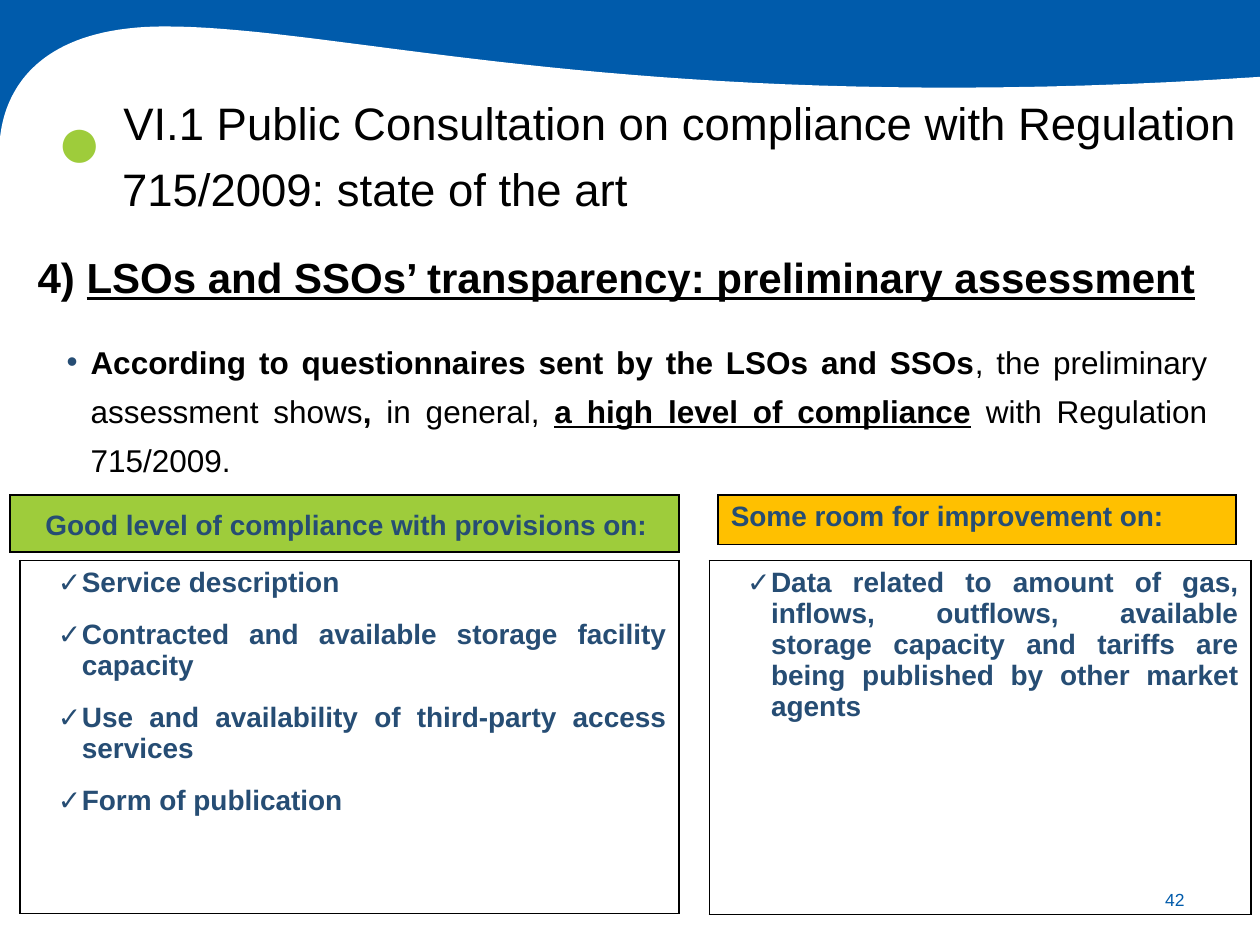
from lxml.etree import SubElement
from pptx import Presentation
from pptx.dml.color import RGBColor
from pptx.enum.shapes import MSO_SHAPE
from pptx.enum.text import MSO_ANCHOR, PP_ALIGN
from pptx.oxml.ns import qn
from pptx.util import Inches, Pt

THEME = {
    "font": "Arial",
    "blue": "005BAB", "green": "9ECC3B", "amber": "FFC000",
    "navy": "264D74", "black": "000000", "white": "FFFFFF",
    "title": 26, "heading": 24, "body": 18, "cell": 16, "number": 10, "dot": 44,
}

TITLE = [[("VI.1 Public Consultation on compliance with Regulation 715/2009: state of the art", "")]]
HEADING = [[("4) ", "b"), ("LSOs and SSOs’ transparency: preliminary assessment", "bu")]]
SUMMARY = [[
    ("According to questionnaires sent by the LSOs and SSOs", "b"),
    (", the preliminary assessment shows", ""),
    (", ", "b"),
    ("in general, ", ""),
    ("a high level of compliance", "bu"),
    (" with Regulation 715/2009.", ""),
]]
GOOD_TITLE = ["Good level of compliance with provisions on:"]
GOOD_ITEMS = [
    "Service description",
    "Contracted and available storage facility capacity",
    "Use and availability of third-party access services",
    "Form of publication",
]
ROOM_TITLE = ["Some room for improvement on:"]
ROOM_ITEMS = [
    "Data related to amount of gas, inflows, outflows, available storage capacity "
    "and tariffs are being published by other market agents",
]

HANGING = {"margin": 0.39, "indent": -0.19}
CHECKED = {**HANGING, "bullet": "✓", "align": PP_ALIGN.JUSTIFY}
PANELS = [
    ((0.08, 3.93, 5.31, 0.45), GOOD_TITLE, "green",
     {"margin": 0.39, "indent": -0.21, "spacing": 1.3}),
    ((0.16, 4.45, 5.23, 2.8), GOOD_ITEMS, None, CHECKED),
    ((5.7, 3.93, 4.11, 0.39), ROOM_TITLE, "amber", {}),
    ((5.63, 4.45, 4.3, 2.81), ROOM_ITEMS, None, CHECKED),
]

WAVE_START = (10, 0.61)
WAVE_CURVES = [
    ((5.1, 0.94), (2.76, 0.21), (1.31, 0.21)),
    ((0.23, 0.21), (0.03, 0.79), (0, 1.1)),
]
WAVE_STEPS = 40


def color(name):
    return RGBColor.from_string(THEME[name])


def write(frame, paragraphs, size, ink, margin=0, indent=0, bullet=None,
          align=PP_ALIGN.LEFT, spacing=1.0, gap=6):
    frame.word_wrap = True
    for index, spans in enumerate(paragraphs):
        para = frame.paragraphs[0] if index == 0 else frame.add_paragraph()
        properties = para._p.get_or_add_pPr()
        properties.set("marL", str(Inches(margin)))
        properties.set("indent", str(Inches(indent)))
        if bullet:
            tint = SubElement(properties, qn("a:buClr"))
            SubElement(tint, qn("a:srgbClr"), val=THEME["navy"])
            SubElement(properties, qn("a:buFont"), typeface=THEME["font"])
            SubElement(properties, qn("a:buChar"), char=bullet)
        para.alignment = align
        para.line_spacing = spacing
        para.space_before = Pt(gap if index else 0)
        para.space_after = Pt(gap)
        for text, style in spans:
            span = para.add_run()
            span.text = text
            span.font.name = THEME["font"]
            span.font.size = Pt(THEME[size])
            span.font.color.rgb = color(ink)
            span.font.bold = "b" in style
            span.font.underline = "u" in style


def add_text(page, place, paragraphs, size, ink, anchor=MSO_ANCHOR.TOP, **layout):
    box = page.shapes.add_textbox(*map(Inches, place))
    box.text_frame.vertical_anchor = anchor
    write(box.text_frame, paragraphs, size, ink, **layout)


def add_panel(page, place, lines, fill, layout):
    table = page.shapes.add_table(1, 1, *map(Inches, place)).table
    table.first_row = False
    table.horz_banding = False
    cell = table.cell(0, 0)
    write(cell.text_frame, [[(line, "b")] for line in lines], "cell", "navy", **layout)
    properties = cell._tc.get_or_add_tcPr()
    for side in ("lnL", "lnR", "lnT", "lnB"):
        border = SubElement(properties, qn(f"a:{side}"), w=str(Pt(1)))
        solid = SubElement(border, qn("a:solidFill"))
        SubElement(solid, qn("a:srgbClr"), val=THEME["black"])
    if fill:
        cell.fill.solid()
        cell.fill.fore_color.rgb = color(fill)
    else:
        cell.fill.background()


def wave_points():
    start = WAVE_START
    for first, second, end in WAVE_CURVES:
        for step in range(1, WAVE_STEPS + 1):
            t = step / WAVE_STEPS
            weights = ((1 - t) ** 3, 3 * t * (1 - t) ** 2, 3 * t * t * (1 - t), t ** 3)
            yield tuple(
                sum(weight * point[axis]
                    for weight, point in zip(weights, (start, first, second, end)))
                for axis in (0, 1)
            )
        start = end


def paint(shape, name):
    shape.shadow.inherit = False
    shape.fill.solid()
    shape.fill.fore_color.rgb = color(name)
    shape.line.fill.background()


def add_backdrop(page):
    band = page.shapes.add_shape(
        MSO_SHAPE.RECTANGLE, 0, 0, Inches(10), Inches(1.15))
    paint(band, "blue")
    outline = [(Inches(x), Inches(y))
               for x, y in (WAVE_START, *wave_points(), (0, 7.5), (10, 7.5))]
    builder = page.shapes.build_freeform(*outline[0])
    builder.add_line_segments(outline[1:], close=True)
    paint(builder.convert_to_shape(), "white")


def main():
    deck = Presentation()
    deck.slide_width, deck.slide_height = Inches(10), Inches(7.5)
    page = deck.slides.add_slide(deck.slide_layouts[6])
    add_backdrop(page)
    add_text(page, (8.94, 6.94, 0.56, 0.4), [[("42", "")]], "number", "blue",
             MSO_ANCHOR.MIDDLE, align=PP_ALIGN.RIGHT, gap=0)
    add_text(page, (0.35, 0.57, 0.55, 0.94), [[("●", "")]], "dot", "green",
             MSO_ANCHOR.BOTTOM, align=PP_ALIGN.CENTER, gap=0)
    add_text(page, (0, 1.87, 9.69, 1.88), HEADING, "heading", "black",
             align=PP_ALIGN.JUSTIFY, spacing=1.2, **HANGING)
    add_text(page, (0.23, 2.58, 9.45, 1.28), SUMMARY, "body", "black",
             align=PP_ALIGN.JUSTIFY, spacing=1.3, bullet="•", **HANGING)
    for place, lines, fill, layout in PANELS:
        add_panel(page, place, lines, fill, layout)
    add_text(page, (0.78, 0.62, 9.22, 1.14), TITLE, "title", "black",
             margin=0.09, indent=0.01, spacing=1.2)
    deck.save("out.pptx")


if __name__ == "__main__":
    main()
